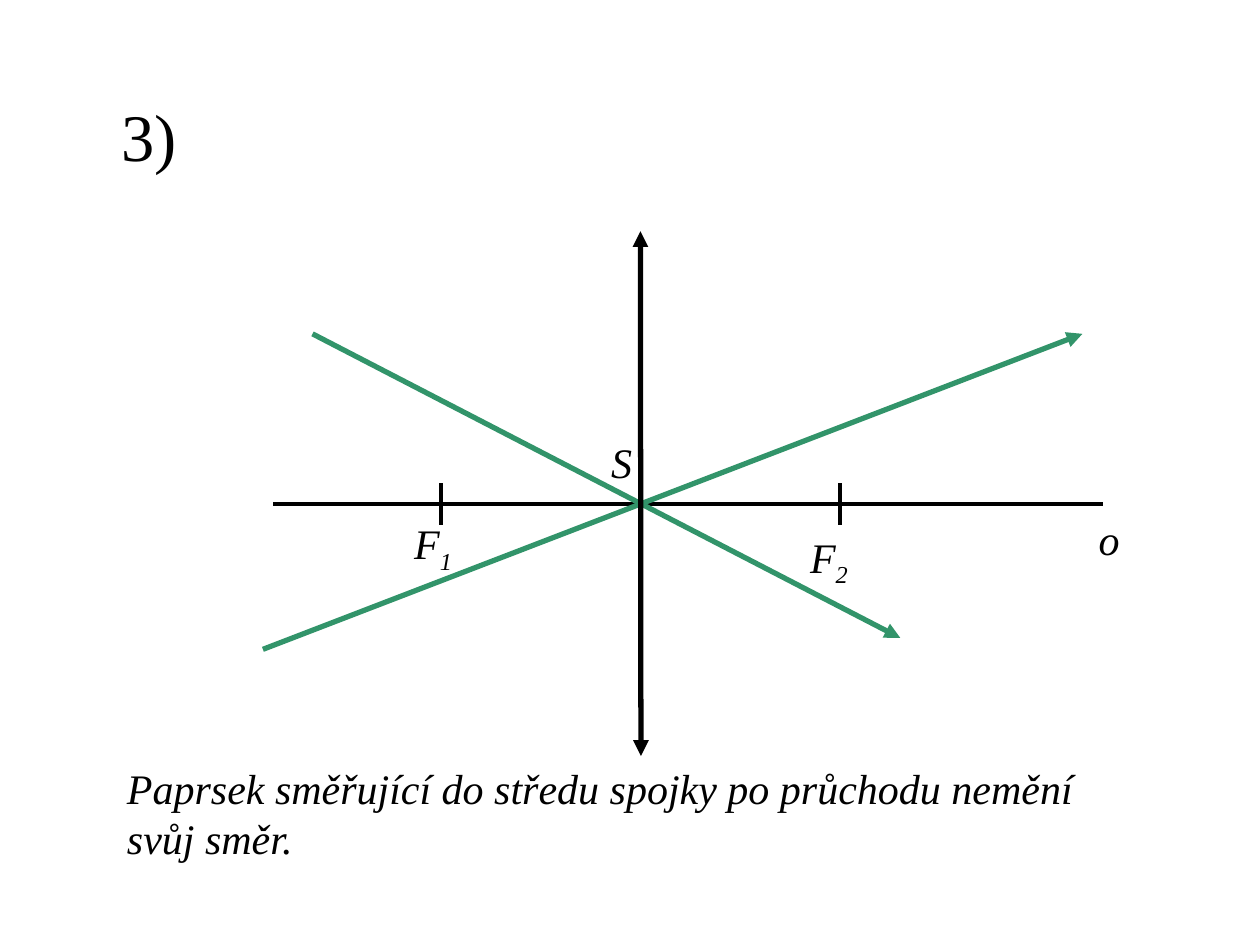
from dataclasses import dataclass

from lxml import etree
from pptx import Presentation
from pptx import util as u
from pptx.dml.color import RGBColor
from pptx.enum import shapes, text
from pptx.oxml import ns


@dataclass(frozen=True)
class Theme:
    font: str = "Times New Roman"
    ink: RGBColor = RGBColor(0x00, 0x00, 0x00)
    ray: RGBColor = RGBColor(0x32, 0x94, 0x6A)
    heading_size: float = 38
    label_size: float = 24
    axis_width: float = 2.25
    ray_width: float = 3


THEME = Theme()
AXIS_Y = 10.16


def add_line(slide, start, end, color=THEME.ink, width=THEME.axis_width, arrows=()):
    ends = [u.Cm(value) for value in (*start, *end)]
    line = slide.shapes.add_connector(shapes.MSO_CONNECTOR.STRAIGHT, *ends)
    line.line.color.rgb = color
    line.line.width = u.Pt(width)
    for arrow in arrows:
        etree.SubElement(line.line._get_or_add_ln(), ns.qn(f"a:{arrow}"), type="triangle")
    etree.SubElement(line._element.spPr, ns.qn("a:effectLst"))
    return line


def add_ray(slide, start, end):
    return add_line(slide, start, end, THEME.ray, THEME.ray_width, ["tailEnd"])


def add_run(paragraph, wording, size=THEME.label_size, italic=True, subscript=False):
    run = paragraph.add_run()
    run.text = wording
    run.font.name = THEME.font
    run.font.size = u.Pt(size)
    run.font.italic = italic
    run.font.color.rgb = THEME.ink
    if subscript:
        run._r.get_or_add_rPr().set("baseline", "-25000")


def add_text_box(slide, left, top, width, height, wrap=True):
    box = slide.shapes.add_textbox(*(u.Cm(v) for v in (left, top, width, height)))
    box.text_frame.word_wrap = wrap
    return box.text_frame


def add_heading(slide, wording):
    frame = add_text_box(slide, 1.3, 1.12, 3.4, 3.18)
    frame.vertical_anchor = text.MSO_ANCHOR.MIDDLE
    paragraph = frame.paragraphs[0]
    paragraph.alignment = text.PP_ALIGN.CENTER
    add_run(paragraph, wording, THEME.heading_size, italic=False)


def add_label(slide, letter, left, top, width, index="", spacing=None):
    frame = add_text_box(slide, left, top, width, 1.28)
    frame.auto_size = text.MSO_AUTO_SIZE.SHAPE_TO_FIT_TEXT
    paragraph = frame.paragraphs[0]
    paragraph.line_spacing = spacing
    add_run(paragraph, letter)
    if index:
        add_run(paragraph, index, subscript=True)


def add_caption(slide, lines):
    frame = add_text_box(slide, 2.31, 15.24, 19.76, 2.31, wrap=False)
    frame.auto_size = text.MSO_AUTO_SIZE.SHAPE_TO_FIT_TEXT
    for number, wording in enumerate(lines):
        paragraph = frame.add_paragraph() if number else frame.paragraphs[0]
        add_run(paragraph, wording)


def main():
    deck = Presentation()
    deck.slide_width, deck.slide_height = u.Cm(25.4), u.Cm(19.05)
    slide = deck.slides.add_slide(deck.slide_layouts[6])

    add_heading(slide, "3)")
    add_line(slide, (5.51, AXIS_Y), (22.23, AXIS_Y))
    add_caption(slide, ["Paprsek směřující do středu spojky po průchodu nemění", "svůj směr."])
    add_ray(slide, (5.3, 13.09), (21.82, 6.73))
    for focus_x in (16.93, 8.89):
        add_line(slide, (focus_x, AXIS_Y - 0.42), (focus_x, AXIS_Y + 0.42))
    add_label(slide, "F", 8.1, 10.31, 1.4, index="1")
    add_label(slide, "F", 16.08, 10.58, 2.41, index="2")
    add_label(slide, "S", 12.07, 8.68, 0.84)
    add_ray(slide, (6.3, 6.73), (18.15, 12.86))
    add_line(slide, (12.91, 4.66), (12.92, 15.24), width=THEME.ray_width,
             arrows=["headEnd", "tailEnd"])
    add_label(slide, "o", 21.9, 10.31, 1, spacing=0.95)

    deck.save("out.pptx")


if __name__ == "__main__":
    main()
